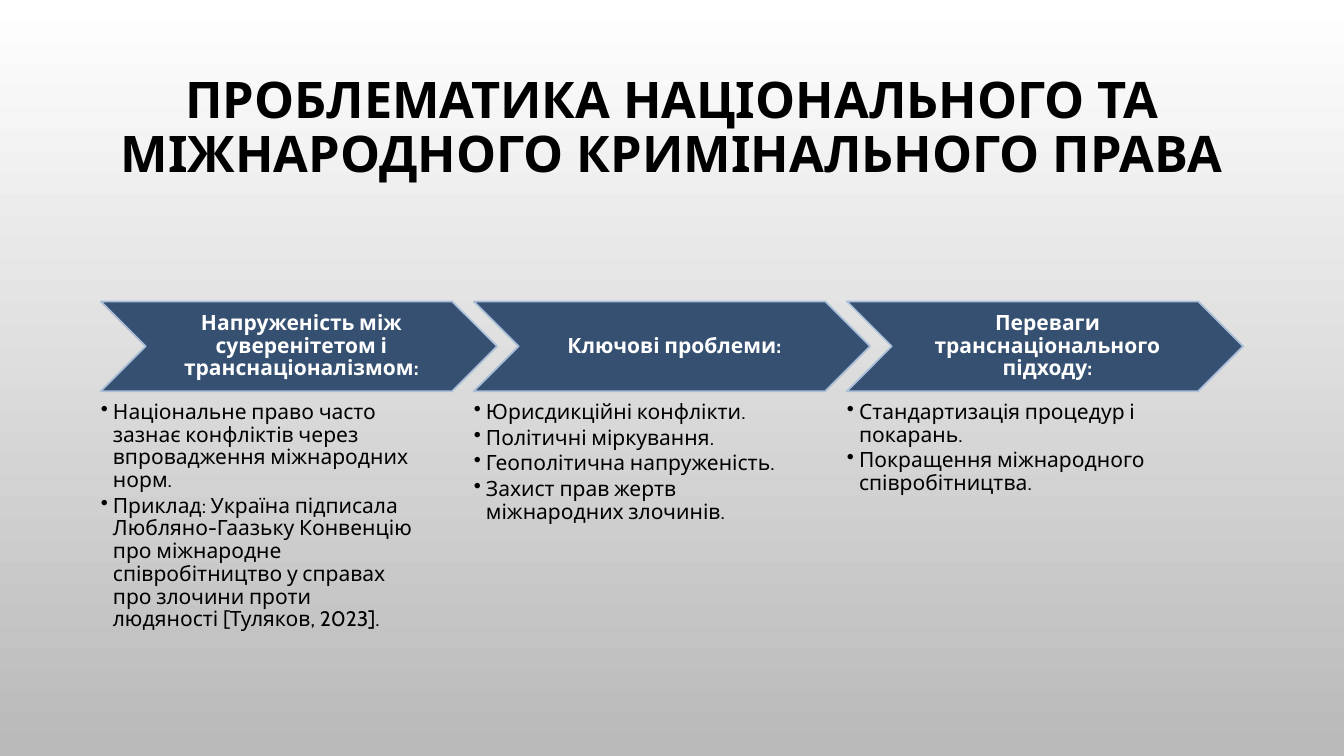
from lxml import etree
from pptx import Presentation
from pptx.dml.color import RGBColor
from pptx.enum import shapes, text
from pptx.oxml.ns import qn
from pptx.util import Inches, Pt

TITLE = "ПРОБЛЕМАТИКА НАЦІОНАЛЬНОГО ТА МІЖНАРОДНОГО КРИМІНАЛЬНОГО ПРАВА"
COLUMNS = [
    ("Напруженість між суверенітетом і транснаціоналізмом:", [
        "Національне право часто зазнає конфліктів через впровадження міжнародних норм.",
        "Приклад: Україна підписала Любляно-Гаазьку Конвенцію про міжнародне "
        "співробітництво у справах про злочини проти людяності [Туляков, 2023].",
    ]),
    ("Ключові проблеми:", [
        "Юрисдикційні конфлікти.",
        "Політичні міркування.",
        "Геополітична напруженість.",
        "Захист прав жертв міжнародних злочинів.",
    ]),
    ("Переваги транснаціонального підходу:", [
        "Стандартизація процедур і покарань.",
        "Покращення міжнародного співробітництва.",
    ]),
]

BLACK = RGBColor(0x00, 0x00, 0x00)
WHITE = RGBColor(0xFF, 0xFF, 0xFF)
GREY = RGBColor(0xB9, 0xB9, 0xB9)
NAVY = RGBColor(0x35, 0x50, 0x71)
PALE_BLUE = RGBColor(0xAA, 0xBE, 0xD7)

LEFT, PITCH = 1, 3.7
CHEVRON_TOP, CHEVRON_W, CHEVRON_H = 2.99, 3.93, 0.89
LIST_TOP, LIST_W, LIST_H = 3.98, 3.15, 1.88
INDENT = Inches(0.12)

TITLE_FONT = {"name": "Karla", "size": Pt(36), "bold": True}
HEADING_FONT = {"name": "Cabin", "size": Pt(15), "bold": True}
LIST_FONT = {"name": "Cabin", "size": Pt(15), "bold": False}


def set_frame(tf, anchor, insets):
    sides = ("margin_left", "margin_top", "margin_right", "margin_bottom")
    values = dict(zip(sides, map(Inches, insets)))
    values.update(word_wrap=True, vertical_anchor=anchor,
                  auto_size=text.MSO_AUTO_SIZE.NONE)
    for key, value in values.items():
        setattr(tf, key, value)


def write(p, words, font, color, align):
    p.alignment = align
    p.line_spacing = 0.9
    r = p.add_run()
    r.text = words
    for key, value in font.items():
        setattr(r.font, key, value)
    r.font.color.rgb = color


def add_bullet(p):
    pPr = p._p.get_or_add_pPr()
    pPr.set("marL", str(INDENT))
    pPr.set("indent", str(-INDENT))
    etree.SubElement(pPr, qn("a:buChar")).set("char", "•")


def add_heading(s, left, heading):
    sp = s.shapes.add_shape(shapes.MSO_SHAPE.CHEVRON, Inches(left), Inches(CHEVRON_TOP),
                            Inches(CHEVRON_W), Inches(CHEVRON_H))
    sp.shadow.inherit = False
    sp.fill.solid()
    sp.fill.fore_color.rgb = NAVY
    sp.line.color.rgb = PALE_BLUE
    sp.line.width = Pt(1.25)
    set_frame(sp.text_frame, text.MSO_ANCHOR.MIDDLE, (0.07, 0.02, 0.02, 0.02))
    write(sp.text_frame.paragraphs[0], heading, HEADING_FONT, WHITE, text.PP_ALIGN.CENTER)


def add_list(s, left, items):
    tf = s.shapes.add_textbox(Inches(left), Inches(LIST_TOP),
                              Inches(LIST_W), Inches(LIST_H)).text_frame
    set_frame(tf, text.MSO_ANCHOR.TOP, (0, 0, 0, 0))
    for i, item in enumerate(items):
        p = tf.add_paragraph() if i else tf.paragraphs[0]
        add_bullet(p)
        p.space_after = Pt(2.25)
        write(p, item, LIST_FONT, BLACK, text.PP_ALIGN.LEFT)


def main():
    prs = Presentation()
    prs.slide_width, prs.slide_height = Inches(13.33), Inches(7.5)
    s = prs.slides.add_slide(prs.slide_layouts[5])

    fill = s.background.fill
    fill.gradient()
    fill.gradient_angle = 270
    for stop, color in zip(fill.gradient_stops, (WHITE, GREY)):
        stop.color.rgb = color

    title = s.shapes.title
    title.left, title.top, title.width, title.height = map(Inches, (1, 0.68, 11.33, 1.75))
    set_frame(title.text_frame, text.MSO_ANCHOR.MIDDLE, (0.1, 0.05, 0.1, 0.6))
    write(title.text_frame.paragraphs[0], TITLE, TITLE_FONT, BLACK, text.PP_ALIGN.CENTER)

    for i, (heading, items) in enumerate(COLUMNS):
        left = LEFT + i * PITCH
        add_heading(s, left, heading)
        add_list(s, left, items)

    prs.save("out.pptx")


if __name__ == "__main__":
    main()
